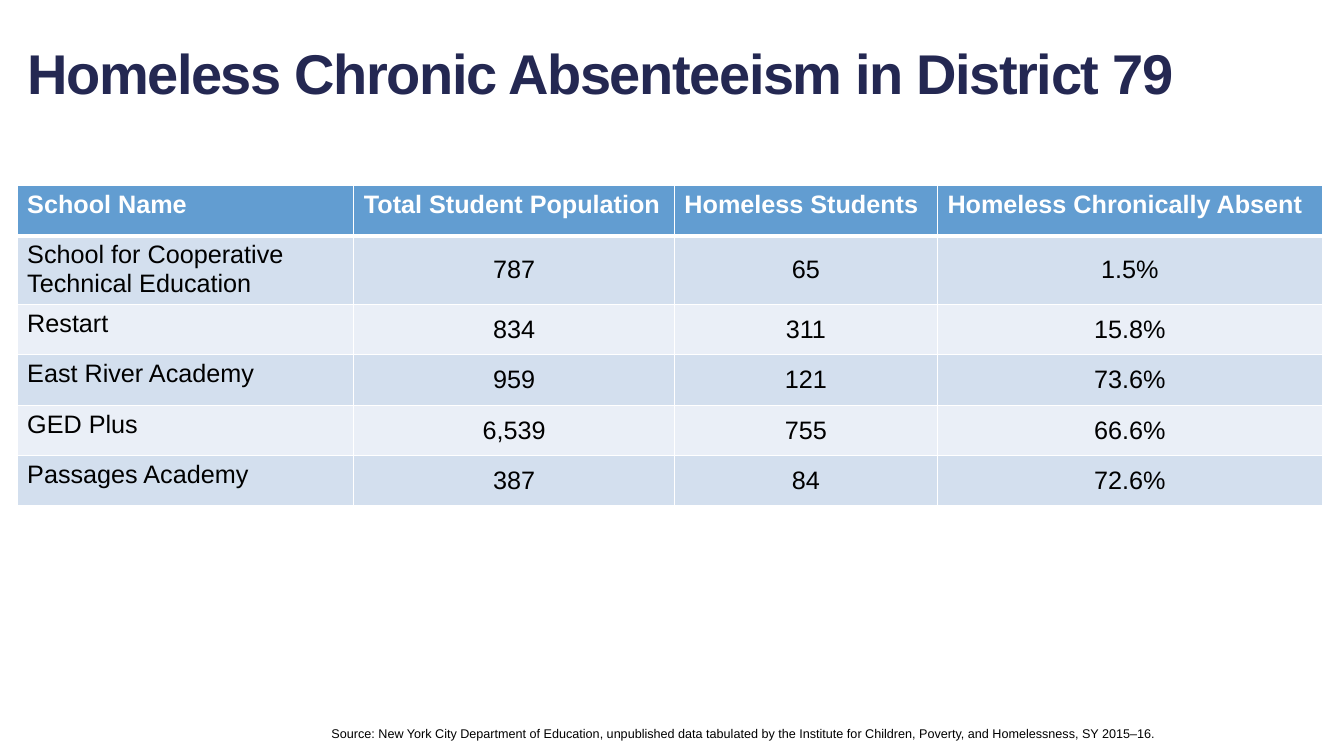
import dataclasses

import lxml.etree
import pptx
import pptx.dml.color
import pptx.enum.text
import pptx.oxml.ns
import pptx.util

Pt = pptx.util.Pt
RGB = pptx.dml.color.RGBColor.from_string
ALIGN = pptx.enum.text.PP_ALIGN
ANCHOR = pptx.enum.text.MSO_ANCHOR


@dataclasses.dataclass(frozen=True)
class Theme:
    font: str = "Arial"
    navy: str = "242852"
    black: str = "000000"
    white: str = "FFFFFF"
    header: str = "629DD1"
    bands: tuple = ("D3DFEE", "EAEFF7")
    title_size: int = 40
    table_size: int = 18
    source_size: int = 9


THEME = Theme()
LEFT, CONTENT_WIDTH = 12.24, 932.4

SCHOOLS = [
    ("School Name", "Total Student Population", "Homeless Students", "Homeless Chronically Absent"),
    ("School for Cooperative Technical Education", "787", "65", "1.5%"),
    ("Restart", "834", "311", "15.8%"),
    ("East River Academy", "959", "121", "73.6%"),
    ("GED Plus", "6,539", "755", "66.6%"),
    ("Passages Academy", "387", "84", "72.6%"),
]
COLUMN_WIDTHS = [240.5, 229, 187.9, 275]
ROW_HEIGHTS = [36, 49, 36, 36, 36, 36]
SOURCE = (
    "Source: New York City Department of Education, unpublished data tabulated by "
    "the Institute for Children, Poverty, and Homelessness, SY 2015–16."
)


def set_attributes(target, values):
    for name, value in values.items():
        setattr(target, name, value)


def write(paragraph, text, size, color, bold=False):
    run = paragraph.add_run()
    run.text = text
    set_attributes(run.font, {"name": THEME.font, "size": Pt(size), "bold": bold})
    run.font.color.rgb = RGB(color)
    return run


def place(shape, left, top, width, height):
    box = {"left": left, "top": top, "width": width, "height": height}
    set_attributes(shape, {side: Pt(value) for side, value in box.items()})


def add_title(slide, text):
    title = slide.shapes.title
    place(title, LEFT, 18.72, CONTENT_WIDTH, 74.16)
    set_attributes(title.text_frame, {"word_wrap": True, "vertical_anchor": ANCHOR.MIDDLE})
    paragraph = title.text_frame.paragraphs[0]
    set_attributes(paragraph, {"alignment": ALIGN.LEFT, "line_spacing": 0.8})
    run = write(paragraph, text, THEME.title_size, THEME.navy, bold=True)
    run.font._element.set("spc", "-100")


def add_borders(cell, widths):
    """Draw white cell borders; widths are for left, right, top and bottom."""
    qn = pptx.oxml.ns.qn
    properties = cell._tc.get_or_add_tcPr()
    for side, width in zip("LRTB", widths):
        line = lxml.etree.SubElement(properties, qn(f"a:ln{side}"), w=str(Pt(width)))
        fill = lxml.etree.SubElement(line, qn("a:solidFill"))
        lxml.etree.SubElement(fill, qn("a:srgbClr"), val=THEME.white)


def format_cell(cell, text, row, column):
    is_header = row == 0
    is_figure = not is_header and column > 0
    add_borders(cell, (1, 1, 3 if row == 1 else 1, 3 if is_header else 1))
    cell.fill.solid()
    cell.fill.fore_color.rgb = RGB(THEME.header if is_header else THEME.bands[(row - 1) % 2])
    cell.vertical_anchor = ANCHOR.MIDDLE if is_figure else ANCHOR.TOP
    paragraph = cell.text_frame.paragraphs[0]
    paragraph.alignment = ALIGN.CENTER if is_figure else ALIGN.LEFT
    color = THEME.white if is_header else THEME.black
    write(paragraph, text, THEME.table_size, color, bold=is_header)


def add_school_table(slide):
    frame = slide.shapes.add_table(
        len(SCHOOLS), len(COLUMN_WIDTHS),
        Pt(LEFT), Pt(132.5), Pt(CONTENT_WIDTH), Pt(sum(ROW_HEIGHTS)),
    )
    table = frame.table
    for column, width in zip(table.columns, COLUMN_WIDTHS):
        column.width = Pt(width)
    for row, height in zip(table.rows, ROW_HEIGHTS):
        row.height = Pt(height)
    for row, school in enumerate(SCHOOLS):
        for column, text in enumerate(school):
            format_cell(table.cell(row, column), text, row, column)


def add_source(slide, text):
    note = slide.shapes.add_textbox(Pt(229.7), Pt(514.8), Pt(721.4), Pt(18))
    note.text_frame.word_wrap = True
    note.text_frame.auto_size = pptx.enum.text.MSO_AUTO_SIZE.SHAPE_TO_FIT_TEXT
    write(note.text_frame.paragraphs[0], text, THEME.source_size, THEME.black)


def main():
    presentation = pptx.Presentation()
    set_attributes(presentation, {"slide_width": Pt(960), "slide_height": Pt(540)})
    slide = presentation.slides.add_slide(presentation.slide_layouts.get_by_name("Title Only"))
    add_title(slide, "Homeless Chronic Absenteeism in District 79")
    add_school_table(slide)
    add_source(slide, SOURCE)
    presentation.save("out.pptx")


if __name__ == "__main__":
    main()
